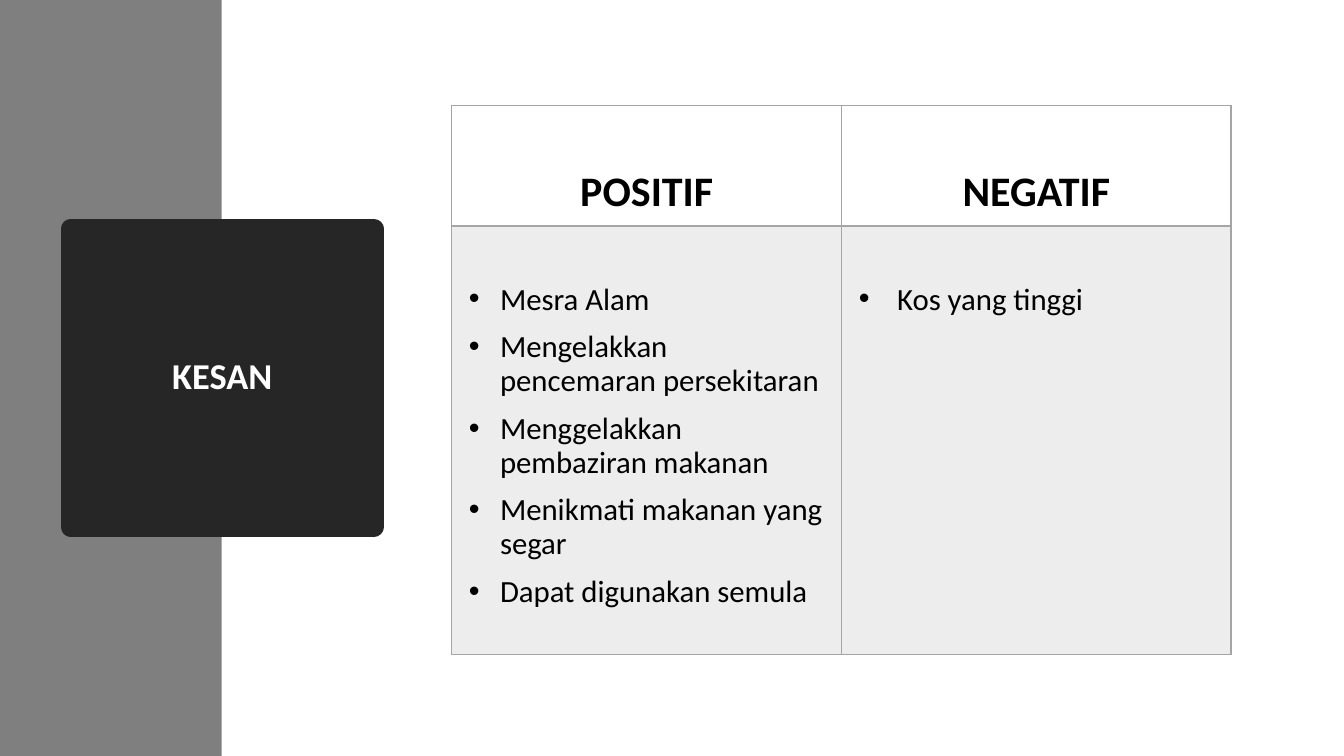
from lxml.etree import SubElement
from pptx import Presentation
from pptx.dml.color import RGBColor
from pptx.enum.shapes import MSO_SHAPE
from pptx.enum.text import MSO_ANCHOR, PP_ALIGN
from pptx.oxml.ns import qn
from pptx.util import Inches, Pt

GREY = RGBColor(0x7F, 0x7F, 0x7F)
DARK = RGBColor(0x26, 0x26, 0x26)
WHITE = RGBColor(0xFF, 0xFF, 0xFF)
BLACK = RGBColor(0x00, 0x00, 0x00)
BORDER = RGBColor(0xA5, 0xA5, 0xA5)
PALE = RGBColor(0xED, 0xED, 0xED)


def add_text(p, text, size, color=BLACK, bold=False, align=PP_ALIGN.LEFT,
             spacing=1.0, before=0, bullet=False):
    p.alignment, p.line_spacing, p.space_before = align, spacing, Pt(before)
    r = p.add_run()
    r.text = text
    r.font.name, r.font.size, r.font.bold = "Calibri", Pt(size), bold
    r.font.color.rgb = color
    if bullet:
        pPr = p._p.get_or_add_pPr()
        pPr.set("marL", str(Inches(0.31)))
        pPr.set("indent", str(-Inches(0.31)))
        SubElement(pPr, qn("a:buFont")).set("typeface", "Arial")
        SubElement(pPr, qn("a:buChar")).set("char", "•")


def set_borders(cell, **widths):
    tcPr = cell._tc.get_or_add_tcPr()
    # Borders come before the fill in the cell properties
    for i, (side, width) in enumerate(widths.items()):
        ln = SubElement(tcPr, qn(f"a:ln{side}"))
        ln.set("w", str(Pt(width)))
        fill = SubElement(ln, qn("a:solidFill"))
        SubElement(fill, qn("a:srgbClr")).set("val", str(BORDER))
        tcPr.insert(i, ln)


prs = Presentation()
prs.slide_width, prs.slide_height = Inches(13.33), Inches(7.5)
s = prs.slides.add_slide(prs.slide_layouts[6])

# Side band
band = s.shapes.add_shape(MSO_SHAPE.RECTANGLE, 0, 0, Inches(2.2), Inches(7.5))
band.shadow.inherit = False
band.fill.solid()
band.fill.fore_color.rgb = GREY
band.line.fill.background()

# Title block, its corners rounded by the thick outline
title = s.shapes.add_shape(MSO_SHAPE.RECTANGLE, Inches(0.7), Inches(2.27),
                           Inches(3.01), Inches(2.96))
title.shadow.inherit = False
title.fill.solid()
title.fill.fore_color.rgb = DARK
title.line.color.rgb = DARK
title.line.width = Pt(13.75)
SubElement(title.line._get_or_add_ln(), qn("a:round"))
tf = title.text_frame
tf.word_wrap = True
tf.vertical_anchor = MSO_ANCHOR.MIDDLE
add_text(tf.paragraphs[0], "KESAN", 26, color=WHITE, bold=True,
         align=PP_ALIGN.CENTER, spacing=0.9)

# Table of effects
effects = {
    "POSITIF": ["Mesra Alam", "Mengelakkan pencemaran persekitaran",
                "Menggelakkan pembaziran makanan",
                "Menikmati makanan yang segar", "Dapat digunakan semula"],
    "NEGATIF": [" Kos yang tinggi"],
}
table = s.shapes.add_table(2, 2, Inches(4.48), Inches(1.05),
                           Inches(7.73), Inches(5.44)).table
table.horz_banding = False
table.rows[0].height, table.rows[1].height = Inches(1.19), Inches(4.25)
table.columns[0].width, table.columns[1].width = Inches(3.87), Inches(3.86)

for col, (heading, items) in enumerate(effects.items()):
    head, body = table.cell(0, col), table.cell(1, col)
    for cell, color, top in ((head, WHITE, 0.08), (body, PALE, 0.57)):
        cell.margin_left = cell.margin_right = Inches(0.17)
        cell.margin_top, cell.margin_bottom = Inches(top), Inches(0.08)
        cell.fill.solid()
        cell.fill.fore_color.rgb = color
    set_borders(head, L=1, R=1, T=1, B=2)
    set_borders(body, L=1, R=1, T=2, B=1)

    head.vertical_anchor = MSO_ANCHOR.BOTTOM
    add_text(head.text_frame.paragraphs[0], heading, 30, bold=True,
             align=PP_ALIGN.CENTER)
    tf = body.text_frame
    for i, item in enumerate(items):
        p = tf.add_paragraph() if i else tf.paragraphs[0]
        add_text(p, item, 22, spacing=0.9, before=10 if i else 0, bullet=True)

prs.save("out.pptx")
